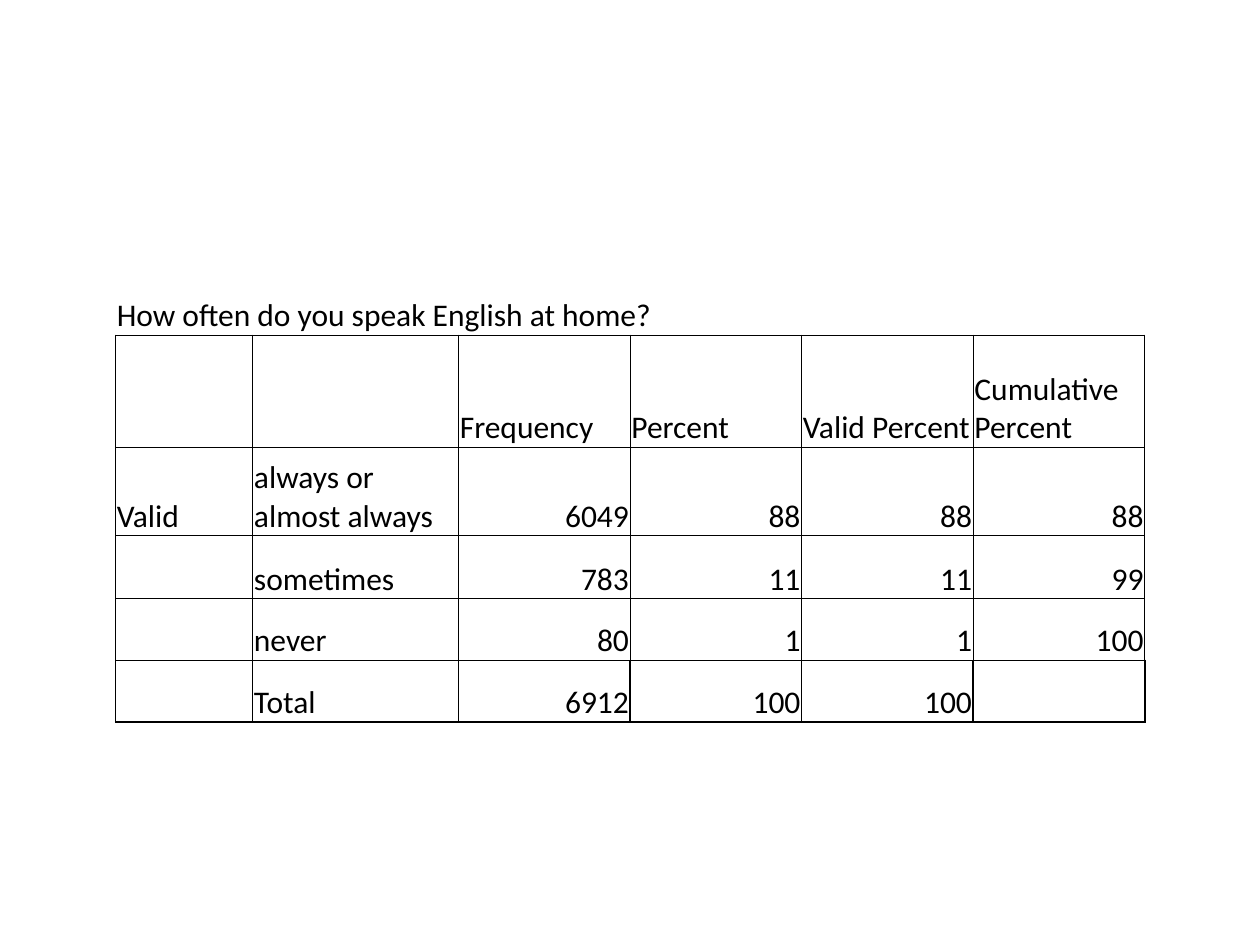
from lxml import etree
from pptx import Presentation
from pptx import util as u
from pptx.dml.color import RGBColor
from pptx.enum import text
from pptx.oxml import ns

BLACK = "000000"
TITLE = "How often do you speak English at home?"
ROWS = [
    ["", "", "Frequency", "Percent", "Valid Percent", "Cumulative Percent"],
    ["Valid", "always or almost always", "6049", "88", "88", "88"],
    ["", "sometimes", "783", "11", "11", "99"],
    ["", "never", "80", "1", "1", "100"],
    ["", "Total", "6912", "100", "100", ""],
]
COLUMN_SHARES = [4, 6, 5, 5, 5, 5]
ROW_SHARES = [49, 89, 70, 50, 49, 49]


def color(value):
    return RGBColor.from_string(value)


def write_text(cell, words, size=18, font="Calibri", fill=BLACK, align=None):
    paragraph = cell.text_frame.paragraphs[0]
    paragraph.alignment = align
    run = paragraph.add_run()
    run.text = words
    run.font.size = u.Pt(size)
    run.font.name = font
    run.font.color.rgb = color(fill)


def set_borders(cell, widths):
    properties = cell._tc.get_or_add_tcPr()
    for position, side in enumerate("LRTB"):
        line = etree.Element(ns.qn(f"a:ln{side}"))
        width = widths.get(side, 0)
        if width:
            line.set("w", str(u.Pt(width)))
            fill = etree.SubElement(line, ns.qn("a:solidFill"))
            etree.SubElement(fill, ns.qn("a:srgbClr"), val=BLACK)
        else:
            etree.SubElement(line, ns.qn("a:noFill"))
        properties.insert(position, line)


def border_widths(row, last):
    if row == 0:
        return {"B": 0.5}
    if row == last:
        return dict.fromkeys("LRTB", 1)
    return {"L": 0.5, "R": 0.5, "T": 0.5, "B": 1 if row == last - 1 else 0.5}


def format_cell(cell, widths):
    cell.fill.background()
    cell.vertical_anchor = text.MSO_ANCHOR.BOTTOM
    cell.margin_left = cell.margin_right = cell.margin_top = u.Inches(0.01)
    cell.margin_bottom = 0
    set_borders(cell, widths)


def add_frequency_table(slide, left, top, width, height):
    contents = [[TITLE] + [""] * (len(COLUMN_SHARES) - 1)] + ROWS
    table = slide.shapes.add_table(
        len(contents), len(COLUMN_SHARES), left, top, width, height
    ).table
    table.first_row = table.horz_banding = False
    for column, share in zip(table.columns, COLUMN_SHARES):
        column.width = int(width * share / sum(COLUMN_SHARES))
    for row, share in zip(table.rows, ROW_SHARES):
        row.height = int(height * share / sum(ROW_SHARES))

    for row, values in enumerate(contents):
        widths = border_widths(row, len(contents) - 1)
        for column, value in enumerate(values):
            cell = table.cell(row, column)
            format_cell(cell, widths)
            if value:
                align = text.PP_ALIGN.RIGHT if value.isdigit() else None
                write_text(cell, value, align=align)
    table.cell(0, 0).merge(table.cell(0, 4))


def main():
    presentation = Presentation()
    presentation.slide_width = u.Inches(10)
    presentation.slide_height = u.Inches(7.5)
    slide = presentation.slides.add_slide(presentation.slide_layouts[6])
    across = presentation.slide_width / 100
    down = presentation.slide_height / 100
    add_frequency_table(
        slide,
        int(9.17 * across),
        int(28.93 * down),
        int(81.7 * across),
        int(47.5 * down),
    )
    presentation.save("out.pptx")


if __name__ == "__main__":
    main()
